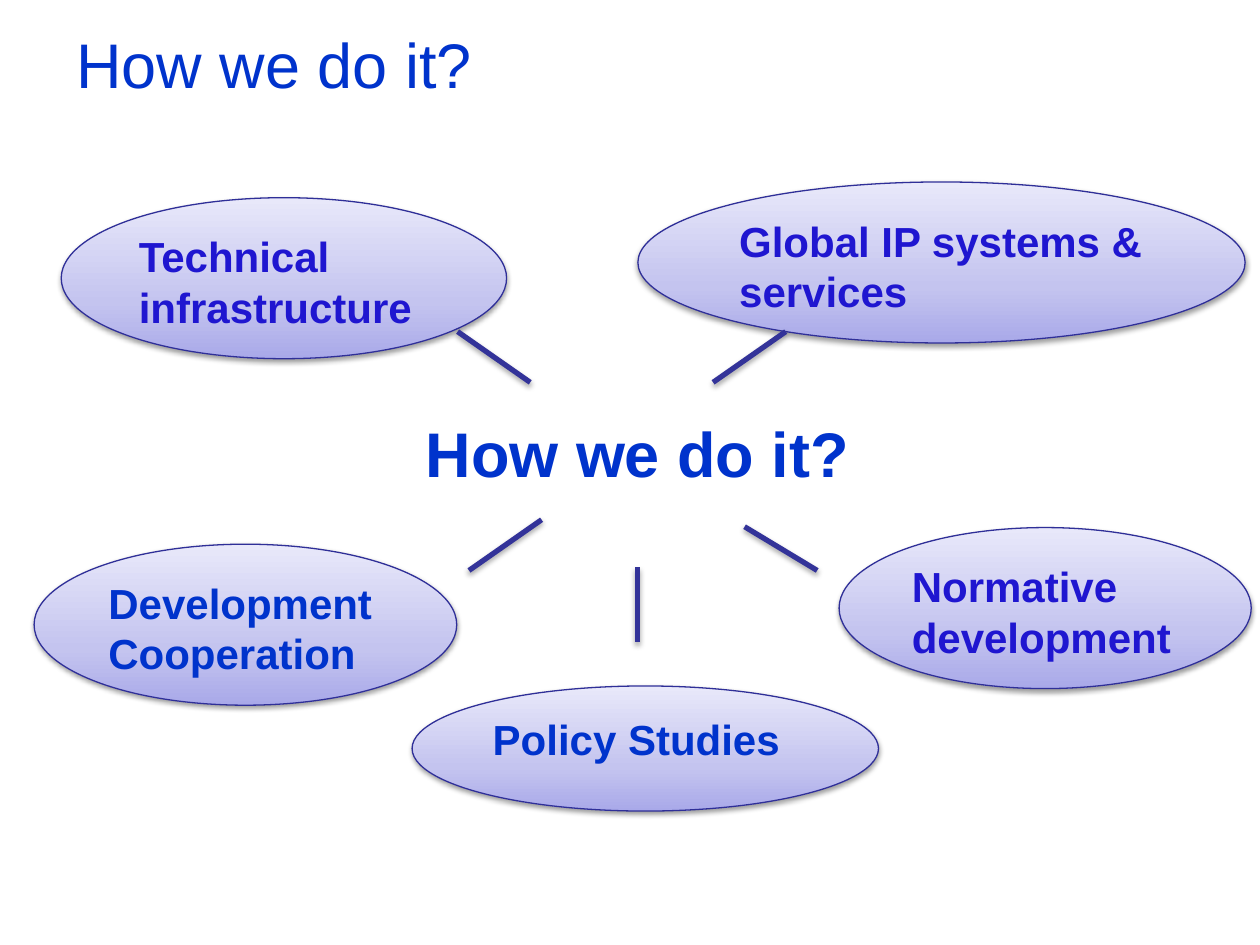
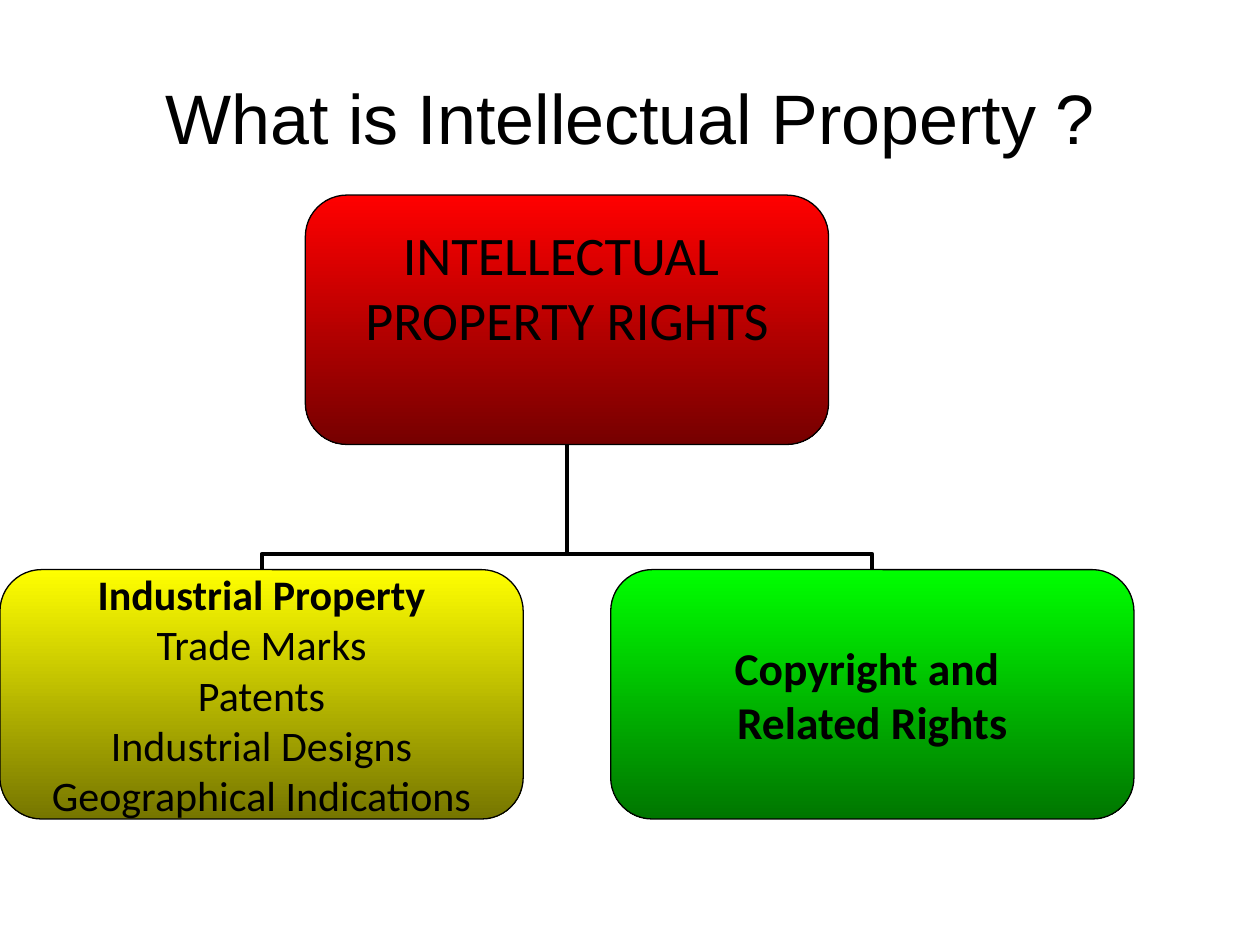
"""Build two slides: how we do it, and what intellectual property is."""
import copy

import pptx
import pptx.dml.color
import pptx.enum.dml
import pptx.enum.shapes
import pptx.enum.text
import pptx.oxml.ns
import pptx.util
from lxml import etree

Pt = pptx.util.Pt
qn = pptx.oxml.ns.qn
SHAPE = pptx.enum.shapes.MSO_SHAPE
CONNECTOR = pptx.enum.shapes.MSO_CONNECTOR
ANCHOR = pptx.enum.text.MSO_ANCHOR
ALIGN = pptx.enum.text.PP_ALIGN

COLOURS = {
    "blue": "0033CC", "violet": "1F16D0", "outline": "2F2F98", "spoke": "333399", "black": "000000",
    "pale": "E8E8FA", "lilac": "C4C4EF", "lavender": "A9A9E9",
    "red": "FF0000", "dark red": "760000",
    "yellow": "FFFF00", "dark yellow": "767600",
    "green": "00FF00", "dark green": "007600",
}

QUESTION = "How we do it?"
ACTIVITIES = [
    ("Normative development", "violet", (479.5, 301.5, 235.5, 92)),
    ("Development Cooperation", "blue", (19.5, 311, 241.5, 92)),
    ("Technical infrastructure", "violet", (35, 113, 254.5, 92)),
    ("Global IP systems & services", "violet", (364.5, 104, 347, 92)),
    ("Policy Studies", "blue", (235.5, 392, 266.5, 71.5)),
]
SPOKES = [
    (261.5, 189.5, 303, 218.5),
    (425.5, 301, 467, 326),
    (364.5, 324, 364.5, 367),
    (268, 326, 309.5, 297),
    (407.5, 218.5, 449, 189.5),
]
ACTIVITY_STOPS = [(0, "pale"), (0.65, "lilac"), (1, "lavender")]
ACTIVITY_SHADOW = {"alpha": 38, "blur": 3.1, "distance": 1.6}
SPOKE_SHADOW = {"alpha": 35, "blur": 3.1, "distance": 1.8}

PROPERTY_QUESTION = "What is Intellectual Property ?"
RIGHTS = {"lines": ["INTELLECTUAL ", "PROPERTY RIGHTS"], "size": 31, "bold_lines": 0,
          "colour": "red", "inset_bottom": 38}
BRANCHES = [
    {"lines": ["Industrial Property", "Trade Marks", "Patents", "Industrial Designs",
               "Geographical Indications"],
     "size": 24, "bold_lines": 1, "colour": "yellow", "inset_bottom": 0},
    {"lines": ["Copyright and ", "Related Rights"], "size": 26, "bold_lines": 2,
     "colour": "green", "inset_bottom": 0},
]
BOX_WIDTH, BOX_HEIGHT, BOX_PITCH = 299, 142.5, 349
RIGHTS_TOP, BRANCHES_TOP = 111.5, 325.5
BUS_SHARE = 12600

ACTIVITY_FRAME = {"word_wrap": True, "vertical_anchor": ANCHOR.TOP, "margin_top": Pt(5.5)}
BOX_FRAME = {"word_wrap": False, "vertical_anchor": ANCHOR.MIDDLE, "margin_left": 0,
             "margin_right": 0, "margin_top": 0}


def rgb(name):
    return pptx.dml.color.RGBColor.from_string(COLOURS[name])


def apply(target, formats):
    for attribute, value in formats.items():
        setattr(target, attribute, value)


def write(frame, lines, frame_formats, colour, align=ALIGN.LEFT, bold_lines=0, **font):
    apply(frame, frame_formats)
    for index, line in enumerate(lines):
        paragraph = frame.paragraphs[0] if index == 0 else frame.add_paragraph()
        paragraph.text = line
        paragraph.alignment = align
        apply(paragraph.font, {"bold": index < bold_lines, **font})
        paragraph.font.color.rgb = rgb(colour)


def add_label(slide, text, area, colour, size, align, anchor=ANCHOR.TOP, bold_lines=0):
    label = slide.shapes.add_textbox(*map(Pt, area))
    write(label.text_frame, [text], {"word_wrap": True, "vertical_anchor": anchor},
          colour, align, bold_lines, name="Arial", size=Pt(size))


def set_shadow(properties, shadow=None):
    effects = properties.find(qn("a:effectLst"))
    if effects is None:
        effects = etree.SubElement(properties, qn("a:effectLst"))
    if shadow:
        outer = etree.SubElement(effects, qn("a:outerShdw"), blurRad=str(Pt(shadow["blur"])),
                                 dist=str(Pt(shadow["distance"])), dir="5400000", rotWithShape="0")
        tone = etree.SubElement(outer, qn("a:srgbClr"), val=COLOURS["black"])
        etree.SubElement(tone, qn("a:alpha"), val=str(shadow["alpha"] * 1000))


def add_gradient_shape(slide, preset, area, stops, outline):
    shape = slide.shapes.add_shape(preset, *map(Pt, area))
    shape.shadow.inherit = False
    shape.fill.gradient()
    shape.fill.gradient_angle = 270
    stop_list = shape._element.spPr.find(".//" + qn("a:gsLst"))
    while len(stop_list) < len(stops):
        stop_list.append(copy.deepcopy(stop_list[0]))
    for stop, (position, colour) in zip(shape.fill.gradient_stops, stops):
        stop.position = position
        stop.color.rgb = rgb(colour)
    shape.line.color.rgb = rgb(outline)
    shape.line.width = Pt(0.75)
    return shape


def add_line(slide, kind, ends, colour, width, shadow=None):
    line = slide.shapes.add_connector(kind, *map(Pt, ends))
    line.line.color.rgb = rgb(colour)
    line.line.width = Pt(width)
    set_shadow(line._element.spPr, shadow)
    return line


def add_branch_line(slide, root_x, branch_x):
    run, drop = abs(branch_x - root_x), BRANCHES_TOP - RIGHTS_TOP - BOX_HEIGHT
    middle_x, middle_y = (root_x + branch_x) / 2, BRANCHES_TOP - drop / 2
    side = 1 if branch_x > root_x else -1
    ends = (middle_x + side * drop / 2, middle_y - run / 2,
            middle_x - side * drop / 2, middle_y + run / 2)
    properties = add_line(slide, CONNECTOR.ELBOW, ends, "black", 2.25)._element.spPr
    properties.find(qn("a:xfrm")).set("rot", str(side * 90 % 360 * 60000))
    geometry = properties.find(qn("a:prstGeom"))
    guides = geometry.find(qn("a:avLst"))
    if guides is None:
        guides = etree.SubElement(geometry, qn("a:avLst"))
    etree.SubElement(guides, qn("a:gd"), name="adj1", fmla=f"val {BUS_SHARE}")


def add_rights_box(slide, box, left, top):
    stops = [(0, box["colour"]), (1, "dark " + box["colour"])]
    shape = add_gradient_shape(slide, SHAPE.ROUNDED_RECTANGLE,
                               (left, top, BOX_WIDTH, BOX_HEIGHT), stops, "black")
    write(shape.text_frame, box["lines"], {**BOX_FRAME, "margin_bottom": Pt(box["inset_bottom"])},
          "black", ALIGN.CENTER, box["bold_lines"], name="Calibri", size=Pt(box["size"]))


def build_activities(slide):
    add_label(slide, QUESTION, (218, 233.5, 292.5, 51), "blue", 36, ALIGN.CENTER, bold_lines=1)
    for text, colour, area in ACTIVITIES:
        ellipse = add_gradient_shape(slide, SHAPE.OVAL, area, ACTIVITY_STOPS, "outline")
        set_shadow(ellipse._element.spPr, ACTIVITY_SHADOW)
        write(ellipse.text_frame, [text], ACTIVITY_FRAME, colour, bold_lines=1,
              name="Arial", size=Pt(24))
    for ends in SPOKES:
        add_line(slide, CONNECTOR.STRAIGHT, ends, "spoke", 3, SPOKE_SHADOW)
    add_label(slide, QUESTION, (36.5, 11, 648, 90), "blue", 36, ALIGN.LEFT)


def build_rights(slide):
    add_label(slide, PROPERTY_QUESTION, (36, 21.5, 648, 90), "black", 40, ALIGN.CENTER,
              ANCHOR.MIDDLE)
    rights_left = BOX_PITCH * (len(BRANCHES) - 1) / 2
    for index in range(len(BRANCHES)):
        add_branch_line(slide, rights_left + BOX_WIDTH / 2, index * BOX_PITCH + BOX_WIDTH / 2)
    add_rights_box(slide, RIGHTS, rights_left, RIGHTS_TOP)
    for index, branch in enumerate(BRANCHES):
        add_rights_box(slide, branch, index * BOX_PITCH, BRANCHES_TOP)


def main():
    deck = pptx.Presentation()
    apply(deck, {"slide_width": Pt(720), "slide_height": Pt(540)})
    for build in (build_activities, build_rights):
        build(deck.slides.add_slide(deck.slide_layouts[6]))
    deck.save("out.pptx")


if __name__ == "__main__":
    main()
